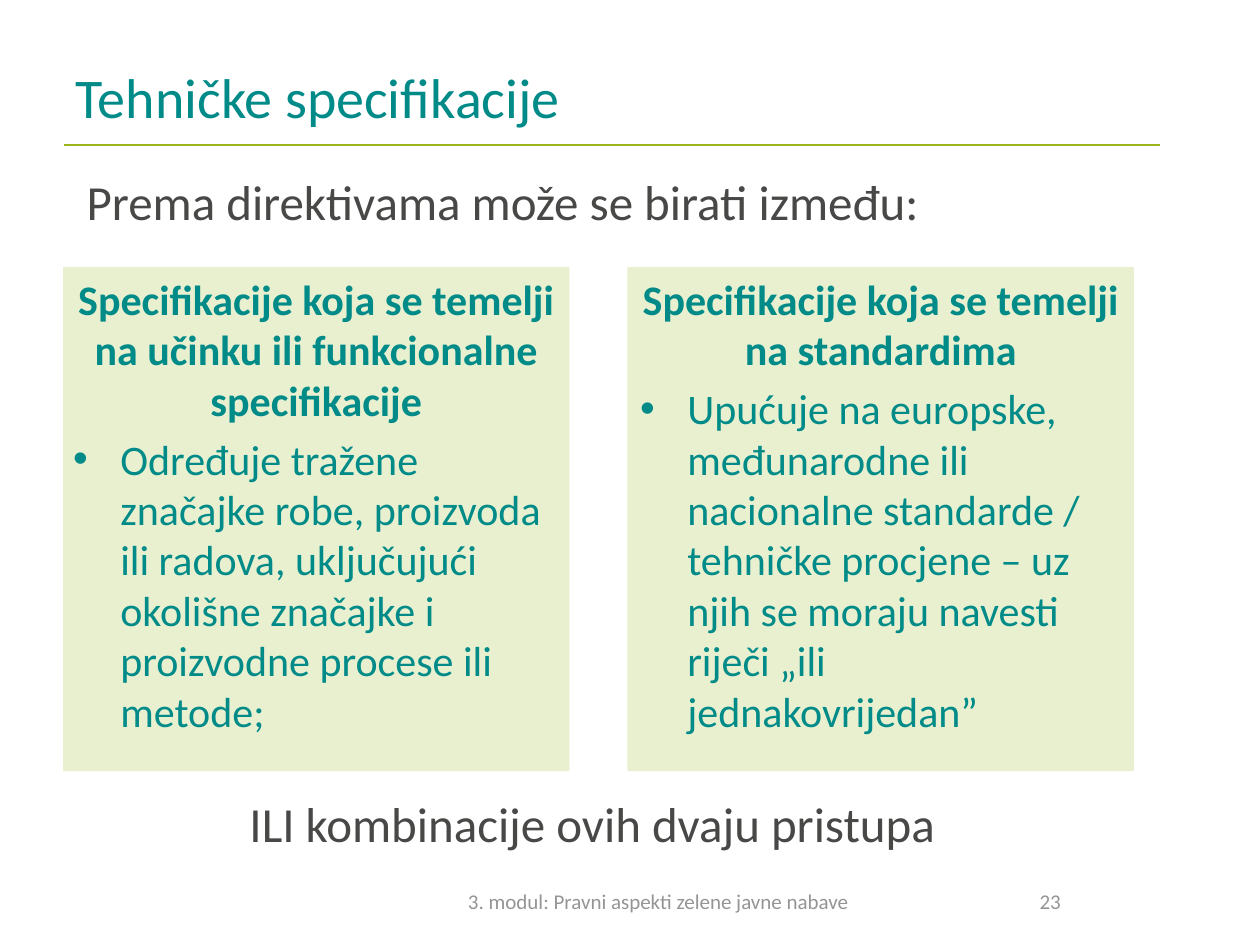
"""Build the slide on technical specifications."""
from pptx import Presentation
from pptx.dml.color import RGBColor
from pptx.enum.shapes import MSO_CONNECTOR
from pptx.enum.text import MSO_ANCHOR, MSO_AUTO_SIZE, PP_ALIGN
from pptx.oxml.ns import qn
from pptx.util import Inches, Pt

TEAL = RGBColor(0x00, 0x8A, 0x88)
LIME = RGBColor(0x9B, 0xB5, 0x1B)
PALE = RGBColor(0xE8, 0xF0, 0xD0)
DARK = RGBColor(0x48, 0x48, 0x47)
GREY = RGBColor(0x95, 0x95, 0x95)
LEFT, CENTER = PP_ALIGN.LEFT, PP_ALIGN.CENTER
TOP, MIDDLE = MSO_ANCHOR.TOP, MSO_ANCHOR.MIDDLE
FIXED = MSO_AUTO_SIZE.NONE
STRAIGHT = MSO_CONNECTOR.STRAIGHT
EDGE, STEP = 0.5, 4.48
CARDS = [
    (0.08, "Specifikacije koja se temelji na učinku ili funkcionalne specifikacije",
     "Određuje tražene značajke robe, proizvoda ili radova, uključujući "
     "okolišne značajke i proizvodne procese ili metode;"),
    (0.1, "Specifikacije koja se temelji na standardima",
     "Upućuje na europske, međunarodne ili nacionalne standarde / tehničke "
     "procjene – uz njih se moraju navesti riječi „ili jednakovrijedan”"),
]


def place(shape, box):
    shape.left, shape.top, shape.width, shape.height = map(Inches, box)


def frame(shape, anchor=TOP):
    text = shape.text_frame
    text.word_wrap = True
    text.auto_size = FIXED
    text.vertical_anchor = anchor
    return text


def write(para, words, size, color, align=LEFT, bold=False):
    para.alignment = align
    run = para.add_run()
    run.text = words
    font = run.font
    font.name, font.size, font.bold = "Calibri", Pt(size), bold
    font.color.rgb = color


def label(slide, box, words, size, color, align=LEFT, anchor=TOP):
    shape = slide.shapes.add_textbox(*map(Inches, box))
    write(frame(shape, anchor).paragraphs[0], words, size, color, align)


def rule(slide, start, end, y):
    line = slide.shapes.add_connector(
        STRAIGHT, Inches(start), Inches(y), Inches(end), Inches(y))
    line.line.color.rgb = LIME
    line.line.width = Pt(0.75)
    props = line._element.spPr
    props.append(props.makeelement(qn("a:effectLst"), {}))


def card(shape, col, inset, head, item):
    place(shape, (EDGE + col * STEP, 2.12, 4.02, 4))
    shape.fill.solid()
    shape.fill.fore_color.rgb = PALE
    text = frame(shape)
    text.margin_left = text.margin_right = Inches(inset)
    first = text.paragraphs[0]
    props = first._p.get_or_add_pPr()
    props.set("marL", "0")
    props.set("indent", "0")
    props.append(props.makeelement(qn("a:buNone"), {}))
    first.space_before = Pt(0)
    write(first, head, 24, TEAL, CENTER, True)
    point = text.add_paragraph()
    point.space_before = Pt(4.8)
    write(point, item, 24, TEAL)


def main():
    deck = Presentation()
    deck.slide_width, deck.slide_height = Inches(10), Inches(7.5)
    slide = deck.slides.add_slide(deck.slide_layouts[3])
    rule(slide, 0.51, 9.21, 1.15)
    title = slide.shapes.title
    place(title, (EDGE, 0.3, 8.59, 0.93))
    write(frame(title, MIDDLE).paragraphs[0], "Tehničke specifikacije", 32, TEAL)
    for col, data in enumerate(CARDS):
        card(slide.placeholders[col + 1], col, *data)
    label(slide, (0.59, 1.31, 8.5, 0.57),
          "Prema direktivama može se birati između:", 28, DARK)
    label(slide, (EDGE, 6.25, 8.4, 0.57),
          "ILI kombinacije ovih dvaju pristupa", 28, DARK, CENTER)
    label(slide, (2.85, 6.95, 4.75, 0.4),
          "3. modul: Pravni aspekti zelene javne nabave", 12, GREY, CENTER, MIDDLE)
    label(slide, (7.17, 6.95, 2.33, 0.4), "23", 12, GREY, CENTER, MIDDLE)
    deck.save("out.pptx")


if __name__ == "__main__":
    main()
